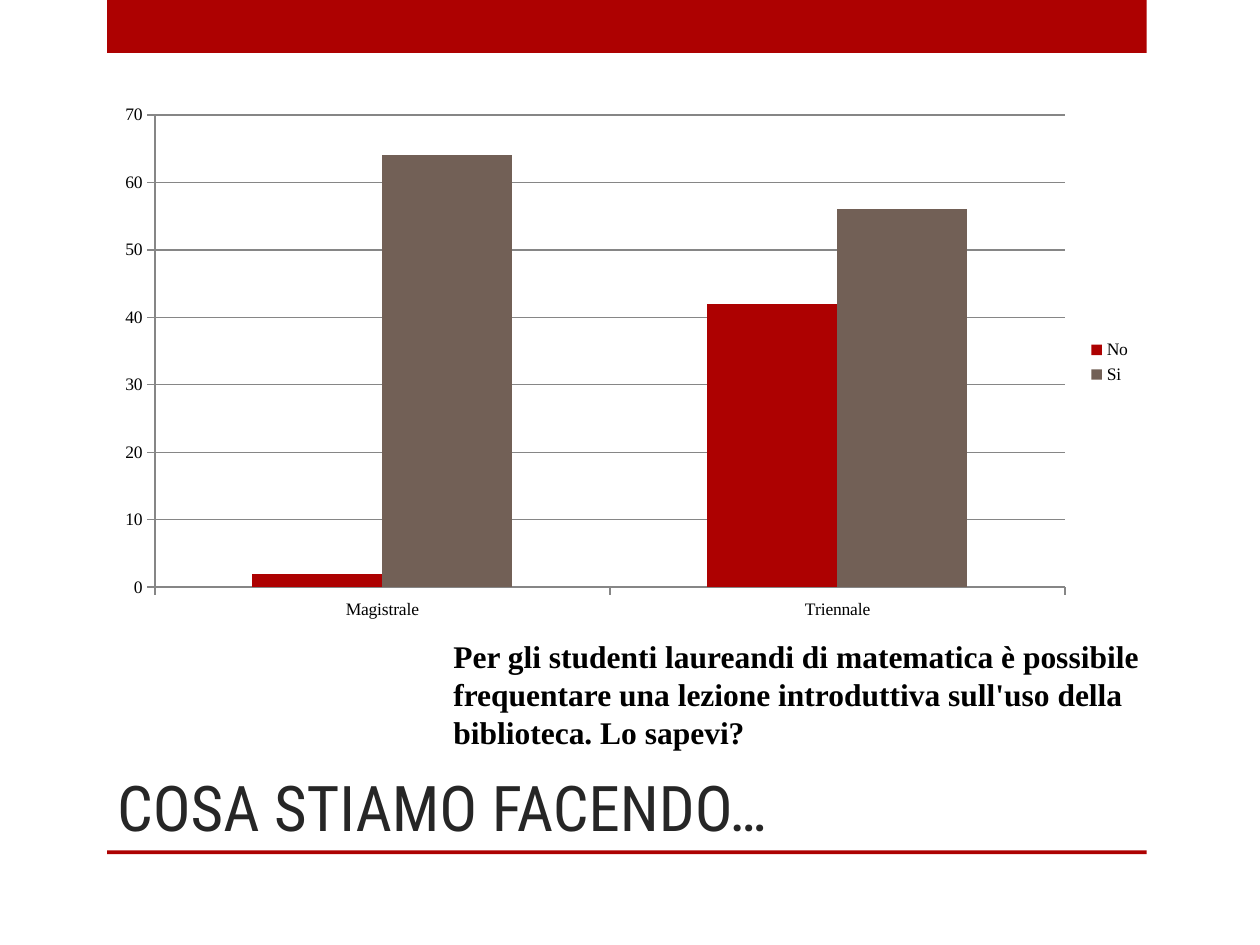
from pptx import Presentation
from pptx.chart.data import CategoryChartData
from pptx.dml.color import RGBColor
from pptx.enum.chart import XL_CHART_TYPE, XL_LEGEND_POSITION, XL_TICK_MARK
from pptx.enum.shapes import MSO_SHAPE
from pptx.enum.text import MSO_ANCHOR, PP_ALIGN
from pptx.util import Inches, Pt

COLUMN = XL_CHART_TYPE.COLUMN_CLUSTERED
RIGHT = XL_LEGEND_POSITION.RIGHT
OUT, NONE = XL_TICK_MARK.OUTSIDE, XL_TICK_MARK.NONE
RECT = MSO_SHAPE.RECTANGLE
BOTTOM, LEFT = MSO_ANCHOR.BOTTOM, PP_ALIGN.LEFT

COLORS = {"red": "AD0101", "brown": "726056", "title": "262626",
          "text": "000000", "line": "868686"}
HEAD, BODY = "Roboto Condensed", "Times New Roman"


def color(name):
    return RGBColor.from_string(COLORS[name])


def style(font, face, size, tint, bold=False):
    font.name, font.size, font.bold = face, Pt(size), bold
    font.color.rgb = color(tint)


def add_bar(slide, box):
    bar = slide.shapes.add_shape(RECT, *map(Inches, box))
    bar.shadow.inherit = False
    bar.fill.solid()
    bar.fill.fore_color.rgb = color("red")
    bar.line.fill.background()


def set_title(slide, box, text):
    title = slide.shapes.title
    title.left, title.top, title.width, title.height = map(Inches, box)
    frame = title.text_frame
    frame.text = text
    frame.word_wrap = True
    frame.vertical_anchor = BOTTOM
    para = frame.paragraphs[0]
    para.alignment = LEFT
    style(para.font, HEAD, 36, "title")


def add_note(slide, box, text):
    frame = slide.shapes.add_textbox(*map(Inches, box)).text_frame
    frame.word_wrap = True
    frame.text = text
    style(frame.paragraphs[0].font, BODY, 18, "text", bold=True)


def add_graph(slide, box, cats, rows):
    data = CategoryChartData()
    data.categories = cats
    for name, vals, _ in rows:
        data.add_series(name, vals)
    chart = slide.shapes.add_chart(COLUMN, *map(Inches, box), data).chart
    style(chart.font, BODY, 10, "text")
    chart.has_title = False

    # Columns
    plot = chart.plots[0]
    plot.gap_width, plot.overlap = 150, 0
    plot.vary_by_categories = False
    for series, (_, _, tint) in zip(plot.series, rows):
        series.format.fill.solid()
        series.format.fill.fore_color.rgb = color(tint)

    # Axes and grid
    scale = chart.value_axis
    scale.minimum_scale, scale.maximum_scale, scale.major_unit = 0, 70, 10
    scale.has_major_gridlines = True
    for axis in (chart.category_axis, scale):
        axis.major_tick_mark, axis.minor_tick_mark = OUT, NONE
    for part in (chart.category_axis, scale, scale.major_gridlines):
        part.format.line.color.rgb = color("line")
        part.format.line.width = Pt(0.75)

    # Legend
    chart.has_legend = True
    chart.legend.position = RIGHT
    chart.legend.include_in_layout = False


def main():
    deck = Presentation()
    deck.slide_width, deck.slide_height = Inches(10), Inches(7.5)
    slide = deck.slides.add_slide(deck.slide_layouts[5])

    # Top band and rule under the title
    for top, height in ((0, 0.42), (6.75, 0.03)):
        add_bar(slide, (0.85, top, 8.25, height))

    set_title(slide, (0.83, 5, 7.42, 1.75), "COSA STIAMO FACENDO…")
    add_note(slide, (3.5, 5.01, 5.75, 1.01),
             "Per gli studenti laureandi di matematica è possibile frequentare "
             "una lezione introduttiva sull'uso della biblioteca. Lo sapevi?")
    add_graph(slide, (0.83, 0.75, 8.25, 4.25), ("Magistrale", "Triennale"),
              (("No", (2, 42), "red"), ("Si", (64, 56), "brown")))
    deck.save("out.pptx")


if __name__ == "__main__":
    main()
